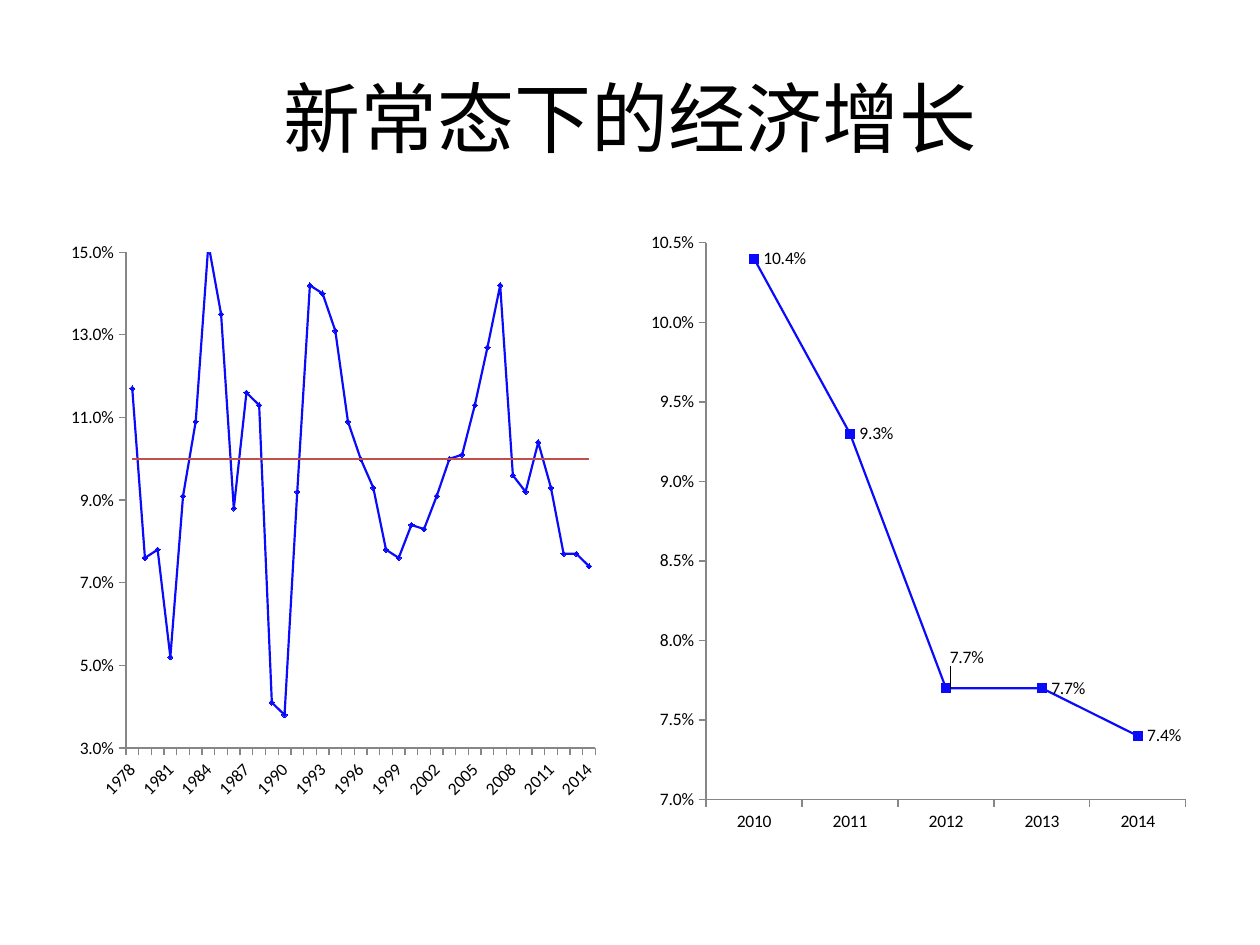
from lxml.etree import SubElement
from pptx import Presentation
from pptx.chart.data import CategoryChartData
from pptx.dml.color import RGBColor
from pptx.enum.chart import XL_CHART_TYPE, XL_LABEL_POSITION, XL_MARKER_STYLE, XL_TICK_MARK
from pptx.enum.text import MSO_ANCHOR, PP_ALIGN
from pptx.oxml.ns import qn
from pptx.util import Inches, Pt

FONT = "Calibri"
COLORS = {"text": "000000", "growth": "0A0AFC", "average": "C0504D", "axis": "868686"}

LONG_RUN = [
    0.117, 0.076, 0.078, 0.052, 0.091, 0.109, 0.152, 0.135, 0.088, 0.116,
    0.113, 0.041, 0.038, 0.092, 0.142, 0.14, 0.131, 0.109, 0.1, 0.093,
    0.078, 0.076, 0.084, 0.083, 0.091, 0.1, 0.101, 0.113, 0.127, 0.142,
    0.096, 0.092, 0.104, 0.093, 0.077, 0.077, 0.074,
]
RECENT = [0.104, 0.093, 0.077, 0.077, 0.074]
AVERAGE = 0.1


def rgb(name):
    return RGBColor.from_string(COLORS[name])


def style_font(font, size):
    font.name = FONT
    font.size = Pt(size)
    font.color.rgb = rgb("text")


def add_layout(parent, position, **settings):
    """Put a manual layout into a chart part at the given child position."""
    for old in parent.findall(qn("c:layout")):
        parent.remove(old)
    layout = SubElement(parent, qn("c:layout"))
    manual = SubElement(layout, qn("c:manualLayout"))
    for tag, value in settings.items():
        SubElement(manual, qn(f"c:{tag}")).set("val", str(value))
    parent.insert(position, layout)


def style_series(series, color, marker, marker_size=5):
    series.smooth = False
    series.format.line.width = Pt(1.25)
    series.format.line.color.rgb = rgb(color)
    series.marker.style = marker
    if marker != XL_MARKER_STYLE.NONE:
        series.marker.size = marker_size
        series.marker.format.fill.solid()
        series.marker.format.fill.fore_color.rgb = rgb(color)
        series.marker.format.line.color.rgb = rgb(color)


def add_line_chart(slide, box, first_year, series_values, low, high, step):
    data = CategoryChartData(number_format="0.0%")
    data.categories = [str(first_year + i) for i in range(len(series_values[0]))]
    for number, values in enumerate(series_values, 1):
        data.add_series(f"Series {number}", values)
    chart = slide.shapes.add_chart(XL_CHART_TYPE.LINE_MARKERS, *box, data).chart
    chart.has_title = False
    chart.has_legend = False
    style_font(chart.font, 10)
    chart.plots[0].vary_by_categories = False

    for axis in (chart.category_axis, chart.value_axis):
        axis.has_major_gridlines = False
        axis.major_tick_mark = XL_TICK_MARK.OUTSIDE
        axis.minor_tick_mark = XL_TICK_MARK.NONE
        axis.format.line.color.rgb = rgb("axis")
        axis.format.line.width = Pt(0.75)
    growth_axis = chart.value_axis
    growth_axis.minimum_scale = low
    growth_axis.maximum_scale = high
    growth_axis.major_unit = step
    growth_axis.tick_labels.number_format = "0.0%"
    growth_axis.tick_labels.number_format_is_linked = False
    return chart


def add_long_run_chart(slide, box):
    averages = [AVERAGE] * len(LONG_RUN)
    chart = add_line_chart(slide, box, 1978, [LONG_RUN, averages], 0.03, 0.15, 0.02)
    growth, average = chart.plots[0].series
    style_series(growth, "growth", XL_MARKER_STYLE.DIAMOND, 3)
    style_series(average, "average", XL_MARKER_STYLE.NONE)

    style_font(chart.category_axis.tick_labels.font, 10)
    year_axis = chart.element.find(f".//{qn('c:catAx')}")
    year_axis.find(f"{qn('c:txPr')}/{qn('a:bodyPr')}").set("rot", "-2700000")
    skip = SubElement(year_axis, qn("c:tickLblSkip"))
    skip.set("val", "3")
    year_axis.find(qn("c:noMultiLvlLbl")).addprevious(skip)

    add_layout(chart.element.find(f".//{qn('c:plotArea')}"), 0,
               layoutTarget="inner", xMode="edge", yMode="edge",
               x=0.113, y=0.051, w=0.843, h=0.795)


def add_recent_chart(slide, box):
    chart = add_line_chart(slide, box, 2010, [RECENT], 0.07, 0.105, 0.005)
    growth = chart.plots[0].series[0]
    style_series(growth, "growth", XL_MARKER_STYLE.SQUARE)
    labels = growth.data_labels
    labels.show_value = True
    labels.number_format = "0.0%"
    labels.number_format_is_linked = False
    labels.position = XL_LABEL_POSITION.RIGHT
    style_font(labels.font, 10)

    # The 2012 label is lifted clear of the line.
    growth.points[2].data_label.position = XL_LABEL_POSITION.RIGHT
    add_layout(chart.element.find(f".//{qn('c:dLbl')}"), 1, x=-0.01, y=-0.05)


def add_title(slide, box):
    title = slide.shapes.title
    title.left, title.top, title.width, title.height = box
    title.text_frame.text = "新常态下的经济增长"
    title.text_frame.vertical_anchor = MSO_ANCHOR.MIDDLE
    heading = title.text_frame.paragraphs[0]
    heading.alignment = PP_ALIGN.CENTER
    style_font(heading.font, 44)


def main():
    deck = Presentation()
    deck.slide_width, deck.slide_height = Inches(10), Inches(7.5)
    slide = deck.slides.add_slide(deck.slide_layouts[5])

    margin, chart_top = Inches(0.5), Inches(1.75)
    chart_width, chart_height = Inches(4.42), Inches(4.95)
    right = deck.slide_width - margin - chart_width
    add_title(slide, (margin, Inches(0.3), Inches(9), Inches(1.25)))
    add_long_run_chart(slide, (margin, chart_top, chart_width, chart_height))
    add_recent_chart(slide, (right, chart_top, chart_width, chart_height))
    deck.save("out.pptx")


if __name__ == "__main__":
    main()
